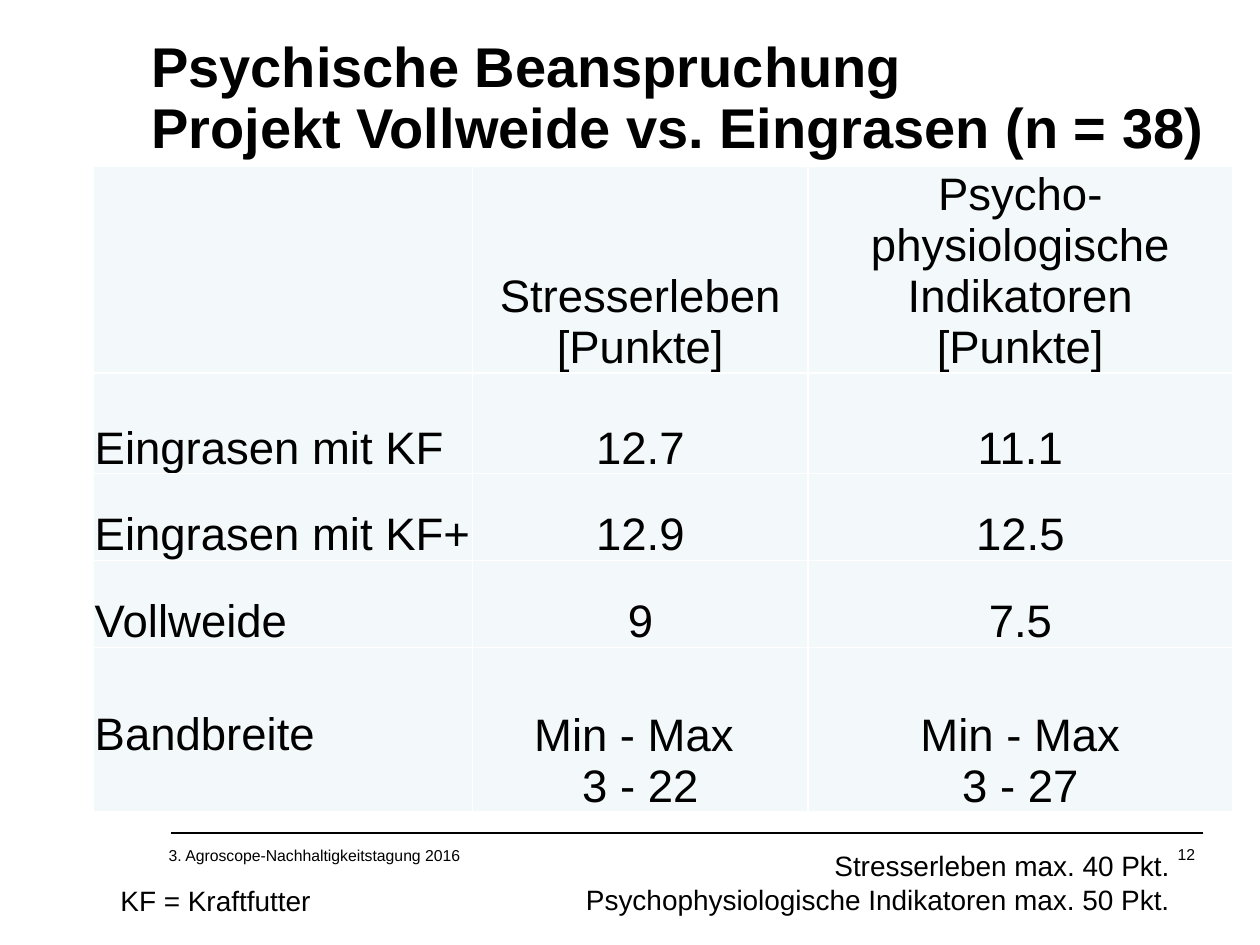
from dataclasses import dataclass

from lxml import etree
from pptx import Presentation
from pptx.dml.color import RGBColor
from pptx.enum.shapes import MSO_CONNECTOR
from pptx.enum.text import MSO_ANCHOR, MSO_AUTO_SIZE, PP_ALIGN
from pptx.oxml.ns import qn
from pptx.util import Cm, Length, Pt

LEFT, CENTER, RIGHT = PP_ALIGN.LEFT, PP_ALIGN.CENTER, PP_ALIGN.RIGHT
BOTTOM = MSO_ANCHOR.BOTTOM
GROW, FIXED = MSO_AUTO_SIZE.SHAPE_TO_FIT_TEXT, MSO_AUTO_SIZE.NONE
STRAIGHT = MSO_CONNECTOR.STRAIGHT


@dataclass(frozen=True)
class Theme:
    font: str = "Arial"
    ink: RGBColor = RGBColor(0, 0, 0)
    cell: RGBColor = RGBColor(0xF3, 0xF9, 0xFA)
    border: str = "FFFFFF"
    border_width: Length = Pt(1)
    rule_width: Length = Pt(0.75)
    title: Length = Pt(32)
    title_line: Length = Pt(35)
    table: Length = Pt(26)
    note: Length = Pt(16)
    footer: Length = Pt(9)


THEME = Theme()


@dataclass(frozen=True)
class TextBlock:
    lines: tuple[str, ...]
    left: float
    top: float
    width: float
    height: float
    size: Length
    align: PP_ALIGN = LEFT
    inset: bool = True
    bold: bool = False
    spacing: float | Length = 1.0
    auto_size: MSO_AUTO_SIZE = GROW


@dataclass(frozen=True)
class TableRow:
    height: float
    cells: tuple[str, str, str]
    label_bottom: float = 0


BLOCKS = (
    TextBlock(("12 ",), 17.88, 17.02, 6.3, 0.41, THEME.footer,
              align=RIGHT, inset=False, spacing=1.05),
    TextBlock(("3. Agroscope-Nachhaltigkeitstagung 2016",),
              3.15, 16.92, 9.25, 0.64, THEME.footer),
    TextBlock(("Psychische Beanspruchung\vProjekt Vollweide vs. Eingrasen (n = 38)",),
              3.05, 0.76, 21.29, 2.57, THEME.title, inset=False, bold=True,
              spacing=THEME.title_line, auto_size=FIXED),
    TextBlock(("KF = Kraftfutter",), 2.18, 17.68, 8.53, 0.94, THEME.note),
    TextBlock(("Stresserleben max. 40 Pkt.",
               "Psychophysiologische Indikatoren max. 50 Pkt."),
              8.23, 16.99, 15.6, 1.63, THEME.note, align=RIGHT),
)

COLUMNS = (7.65, 6.76, 8.56)
ROWS = (
    TableRow(4.17, ("", "Stresserleben\n[Punkte]",
                    "Psycho-physiologische Indikatoren\n[Punkte]")),
    TableRow(2.03, ("Eingrasen mit KF", "12.7", "11.1")),
    TableRow(1.75, ("Eingrasen mit KF+", "12.9", "12.5")),
    TableRow(1.75, ("Vollweide", "9", "7.5")),
    # The label lines up with the first of two value lines
    TableRow(3.32, ("Bandbreite", "Min - Max \n3 - 22", "Min - Max\n3 - 27"),
             label_bottom=1.05),
)


def set_attrs(obj, values: dict) -> None:
    for name, value in values.items():
        setattr(obj, name, value)


def write_lines(tf, lines, size: Length, align: PP_ALIGN,
                bold: bool = False, spacing: float | Length = 1.0) -> None:
    for i, line in enumerate(lines):
        p = tf.paragraphs[0] if i == 0 else tf.add_paragraph()
        p.text = line
        set_attrs(p, {"alignment": align, "line_spacing": spacing})
        for r in p.runs:
            set_attrs(r.font, {"name": THEME.font, "size": size, "bold": bold})
            r.font.color.rgb = THEME.ink


def add_block(s, block: TextBlock) -> None:
    sp = s.shapes.add_textbox(Cm(block.left), Cm(block.top),
                              Cm(block.width), Cm(block.height))
    tf = sp.text_frame
    set_attrs(tf, {"word_wrap": True, "auto_size": block.auto_size})
    if not block.inset:
        set_attrs(tf, {f"margin_{side}": 0
                       for side in ("left", "top", "right", "bottom")})
    write_lines(tf, block.lines, block.size, block.align, block.bold, block.spacing)


def add_rule(s, left: float, right: float, top: float) -> None:
    line = s.shapes.add_connector(STRAIGHT, Cm(right), Cm(top), Cm(left), Cm(top))
    line.line.color.rgb = THEME.ink
    line.line.width = THEME.rule_width
    etree.SubElement(line._element.spPr, qn("a:effectLst"))


def set_borders(cell) -> None:
    tc_pr = cell._tc.get_or_add_tcPr()
    for tag in ("a:lnL", "a:lnR", "a:lnT", "a:lnB"):
        ln = etree.SubElement(tc_pr, qn(tag), w=str(THEME.border_width))
        fill = etree.SubElement(ln, qn("a:solidFill"))
        etree.SubElement(fill, qn("a:srgbClr"), val=THEME.border)


def add_data_table(s, left: float, top: float) -> None:
    height = sum(row.height for row in ROWS)
    table = s.shapes.add_table(len(ROWS), len(COLUMNS), Cm(left), Cm(top),
                               Cm(sum(COLUMNS)), Cm(height)).table
    set_attrs(table, {"first_row": False, "horz_banding": False})
    for column, width in zip(table.columns, COLUMNS):
        column.width = Cm(width)
    for i, row in enumerate(ROWS):
        table.rows[i].height = Cm(row.height)
        for j, text in enumerate(row.cells):
            cell = table.cell(i, j)
            set_attrs(cell, {
                "margin_left": Cm(0.03), "margin_right": Cm(0.03),
                "margin_top": Cm(0.03),
                "margin_bottom": Cm(row.label_bottom if j == 0 else 0),
                "vertical_anchor": BOTTOM,
            })
            set_borders(cell)
            cell.fill.solid()
            cell.fill.fore_color.rgb = THEME.cell
            write_lines(cell.text_frame, text.split("\n"), THEME.table,
                        LEFT if j == 0 else CENTER)


def main() -> None:
    prs = Presentation()
    prs.slide_width, prs.slide_height = Cm(25.4), Cm(19.05)
    s = prs.slides.add_slide(prs.slide_layouts[6])

    # Footer rule
    add_rule(s, left=3.45, right=24.26, top=16.79)

    # Results
    add_data_table(s, left=1.88, top=3.35)

    # Title, footer and notes
    for block in BLOCKS:
        add_block(s, block)

    prs.save("out.pptx")


if __name__ == "__main__":
    main()
